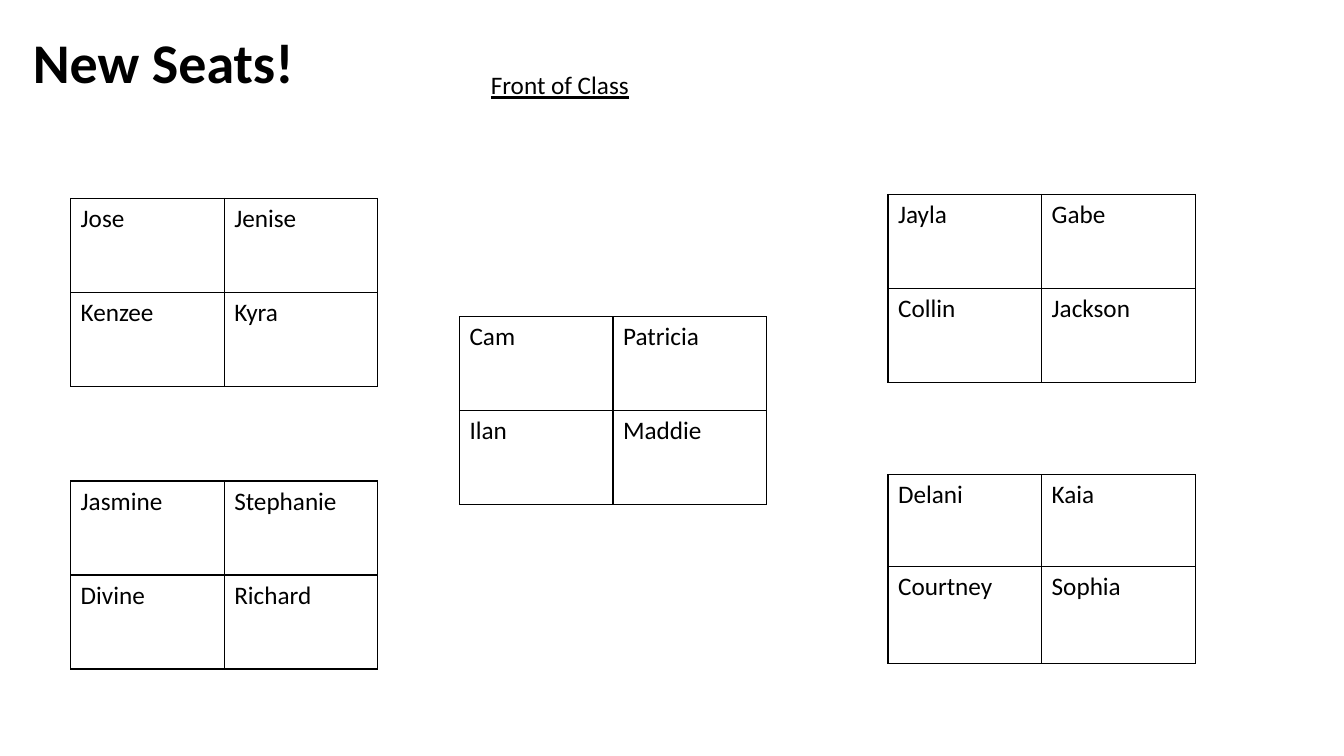
from lxml import etree
from pptx import Presentation
from pptx.dml.color import RGBColor
from pptx.enum import text
from pptx.oxml import ns
from pptx.util import Cm, Pt

FONT = "Calibri"
BLACK = "000000"
SEAT_WIDTH = 3.87
SEAT_HEIGHTS = (2.37, 2.37)

# words, (left, top, width, height) in cm, size, anchor, line spacing, bold, underline
HEADINGS = [
    ("New Seats!", (0.58, 0, 28.24, 3.28), 40, text.MSO_ANCHOR.MIDDLE, 0.9, True, False),
    ("Front of Class", (12.12, 1.63, 9.14, 1.02), 18, text.MSO_ANCHOR.TOP, 1.0, False, True),
]

# left, top, row heights in cm, pupils by row
DESK_GROUPS = [
    (1.78, 5.0, SEAT_HEIGHTS, [("Jose", "Jenise"), ("Kenzee", "Kyra")]),
    (22.38, 11.96, (2.32, 2.43), [("Delani", "Kaia"), ("Courtney", "Sophia")]),
    (22.38, 4.9, SEAT_HEIGHTS, [("Jayla", "Gabe"), ("Collin", "Jackson")]),
    (1.78, 12.12, SEAT_HEIGHTS, [("Jasmine", "Stephanie"), ("Divine", "Richard")]),
    (11.58, 7.98, SEAT_HEIGHTS, [("Cam", "Patricia"), ("Ilan", "Maddie")]),
]


def color(hex_code):
    return RGBColor.from_string(hex_code)


def write(frame, words, size, bold=False, underline=False):
    run = frame.paragraphs[0].add_run()
    run.text = words
    run.font.name = FONT
    run.font.size = Pt(size)
    run.font.bold = bold
    run.font.underline = underline
    run.font.color.rgb = color(BLACK)


def outline(seat):
    """Draw a thin line on all four sides of a table cell."""
    properties = seat._tc.get_or_add_tcPr()
    for position, side in enumerate(("lnL", "lnR", "lnT", "lnB")):
        line = etree.Element(ns.qn(f"a:{side}"), w=str(Pt(1)))
        fill = etree.SubElement(line, ns.qn("a:solidFill"))
        etree.SubElement(fill, ns.qn("a:srgbClr"), val=BLACK)
        properties.insert(position, line)


def add_heading(slide, words, box, size, anchor, spacing, bold, underline):
    frame = slide.shapes.add_textbox(*map(Cm, box)).text_frame
    frame.word_wrap = True
    frame.vertical_anchor = anchor
    frame.paragraphs[0].line_spacing = spacing
    write(frame, words, size, bold, underline)


def add_desk_group(slide, left, top, heights, pupils):
    columns = len(pupils[0])
    desks = slide.shapes.add_table(
        len(pupils), columns, Cm(left), Cm(top),
        Cm(SEAT_WIDTH * columns), Cm(sum(heights))).table
    desks.first_row = False
    desks.horz_banding = False
    for column in desks.columns:
        column.width = Cm(SEAT_WIDTH)
    for r, (height, names) in enumerate(zip(heights, pupils)):
        desks.rows[r].height = Cm(height)
        for c, name in enumerate(names):
            seat = desks.cell(r, c)
            seat.fill.background()
            outline(seat)
            write(seat.text_frame, name, 18)


def main():
    deck = Presentation()
    deck.slide_width, deck.slide_height = Cm(33.87), Cm(19.05)
    slide = deck.slides.add_slide(deck.slide_layouts[6])
    for heading in HEADINGS:
        add_heading(slide, *heading)
    for group in DESK_GROUPS:
        add_desk_group(slide, *group)
    deck.save("out.pptx")


if __name__ == "__main__":
    main()
